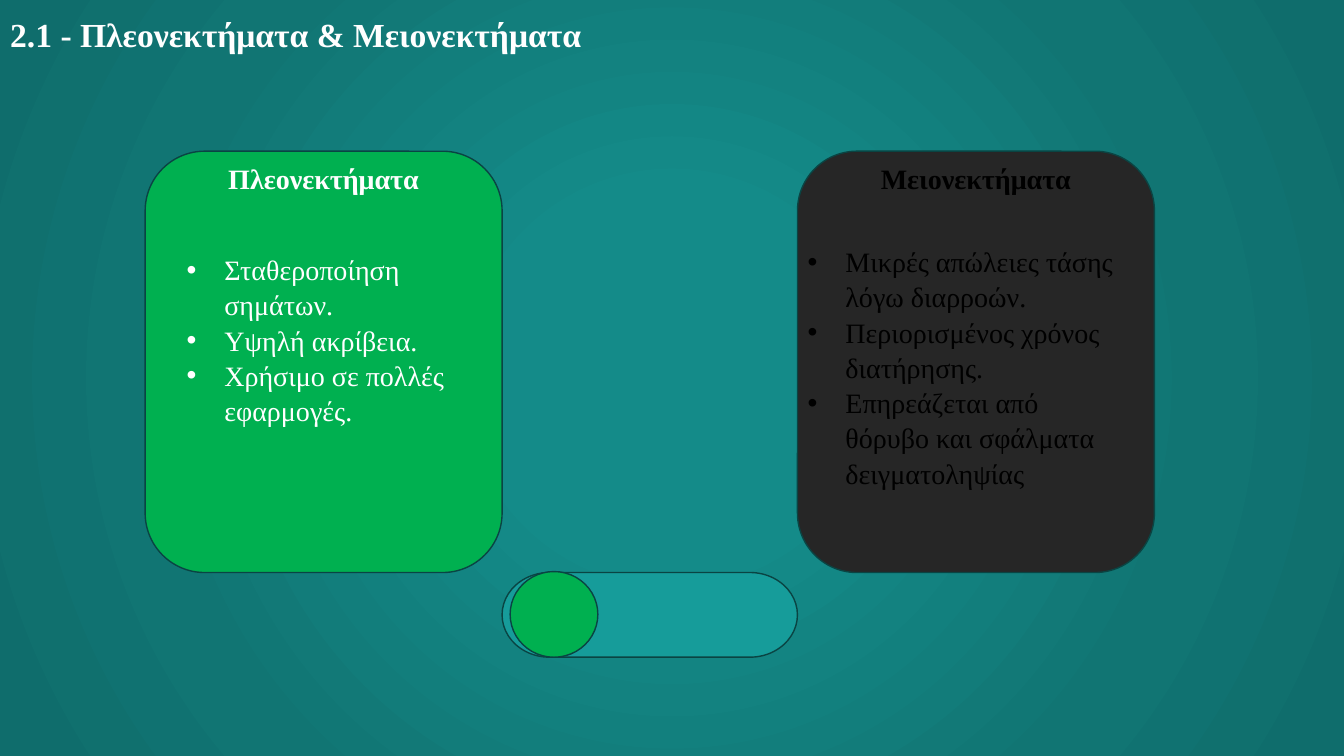
from lxml import etree
from pptx import Presentation
from pptx.dml import color
from pptx.enum import shapes, text
from pptx.oxml import ns
from pptx.util import Inches, Pt

FONT = "Times New Roman"
GREEN, DARK, TEAL, OUTLINE = "00B050", "262626", "169C9A", "0A4443"
WHITE, BLACK = "FFFFFF", "000000"
BACKGROUND_STOPS = [(0, "148B89"), (23, "148B89"), (69, "117573"), (97, "0F6D6C")]

CARD_TOP, CARD_WIDTH, CARD_HEIGHT = 1.5, 3.54, 4.18
# heading, fill, text colour, card left, list box (relative to card), items
CARDS = [
    ("Πλεονεκτήματα", GREEN, WHITE, 1.44, (0.31, 0.94, 3.23, 1.78),
     ["Σταθεροποίηση σημάτων.", "Υψηλή ακρίβεια.", "Χρήσιμο σε πολλές εφαρμογές."]),
    ("Μειονεκτήματα", DARK, BLACK, 7.91, (0, 0.86, 3.38, 2.46),
     ["Μικρές απώλειες τάσης λόγω διαρροών.", "Περιορισμένος χρόνος διατήρησης.",
      "Επηρεάζεται από θόρυβο και σφάλματα δειγματοληψίας"]),
]


def rgb(value):
    return color.RGBColor.from_string(value)


def place(shape, left, top, width, height):
    shape.left, shape.top = Inches(left), Inches(top)
    shape.width, shape.height = Inches(width), Inches(height)


def style_paragraph(paragraph, size, text_color, bold=False):
    font = paragraph.font
    font.name, font.size, font.bold = FONT, Pt(size), bold
    font.color.rgb = rgb(text_color)


def add_outlined_shape(slide, kind, box, fill):
    shape = slide.shapes.add_shape(kind, *map(Inches, box))
    shape.shadow.inherit = False
    shape.fill.solid()
    shape.fill.fore_color.rgb = rgb(fill)
    shape.line.color.rgb = rgb(OUTLINE)
    shape.line.width = Pt(1)
    return shape


def set_radial_background(slide, stops):
    # Radial gradients need XML
    slide.background.fill.solid()
    solid = next(slide.element.iter(ns.qn("a:solidFill")))
    gradient = etree.Element(ns.qn("a:gradFill"), rotWithShape="1")
    stop_list = etree.SubElement(gradient, ns.qn("a:gsLst"))
    for position, value in stops:
        stop = etree.SubElement(stop_list, ns.qn("a:gs"), pos=str(position * 1000))
        etree.SubElement(stop, ns.qn("a:srgbClr"), val=value)
    circle = etree.SubElement(gradient, ns.qn("a:path"), path="circle")
    etree.SubElement(circle, ns.qn("a:fillToRect"), l="50000", t="50000", r="50000", b="50000")
    solid.getparent().replace(solid, gradient)


def fill_title(title, box):
    place(title, *box)
    title.text = "2.1 - Πλεονεκτήματα & Μειονεκτήματα"
    title.text_frame.auto_size = text.MSO_AUTO_SIZE.NONE
    title.text_frame.vertical_anchor = text.MSO_ANCHOR.MIDDLE
    paragraph = title.text_frame.paragraphs[0]
    paragraph.alignment = text.PP_ALIGN.LEFT
    style_paragraph(paragraph, 24, WHITE, bold=True)


def add_card(slide, body, box, heading, fill, text_color, list_box, items):
    left, top, width, height = box

    # Card with its heading
    card = add_outlined_shape(slide, shapes.MSO_SHAPE.ROUNDED_RECTANGLE, box, fill)
    frame = card.text_frame
    frame.text = heading
    frame.vertical_anchor = text.MSO_ANCHOR.TOP
    frame.margin_top = 0
    paragraph = frame.paragraphs[0]
    paragraph.alignment = text.PP_ALIGN.CENTER
    paragraph.line_spacing = Pt(19)
    style_paragraph(paragraph, 20, text_color, bold=True)

    # Bulleted list, brought in front of the card
    offset_x, offset_y, list_width, list_height = list_box
    place(body, left + offset_x, top + offset_y, list_width, list_height)
    slide.shapes.element.append(body.element)
    body.text = "\n".join(items)
    body.text_frame.auto_size = text.MSO_AUTO_SIZE.NONE
    for paragraph in body.text_frame.paragraphs:
        paragraph.space_before = Pt(0)
        paragraph.line_spacing = 1.05
        style_paragraph(paragraph, 20, text_color)


def add_toggle(slide, left, top, width, height):
    add_outlined_shape(slide, shapes.MSO_SHAPE.FLOWCHART_TERMINATOR,
                       (left, top, width, height), TEAL)
    add_outlined_shape(slide, shapes.MSO_SHAPE.OVAL,
                       (left + 0.08, top - 0.01, 0.87, height + 0.01), GREEN)


def main():
    presentation = Presentation()
    presentation.slide_width, presentation.slide_height = Inches(13.33), Inches(7.5)
    slide = presentation.slides.add_slide(presentation.slide_layouts.get_by_name("Two Content"))
    set_radial_background(slide, BACKGROUND_STOPS)

    title, *bodies = list(slide.placeholders)
    fill_title(title, (0, 0.09, 6.42, 0.5))
    for body, (heading, fill, text_color, left, list_box, items) in zip(bodies, CARDS):
        card_box = (left, CARD_TOP, CARD_WIDTH, CARD_HEIGHT)
        add_card(slide, body, card_box, heading, fill, text_color, list_box, items)

    # The toggle spans the gap between the cards, just below them
    toggle_left = CARDS[0][3] + CARD_WIDTH
    add_toggle(slide, toggle_left, CARD_TOP + CARD_HEIGHT, CARDS[1][3] - toggle_left, 0.84)
    presentation.save("out.pptx")


if __name__ == "__main__":
    main()
